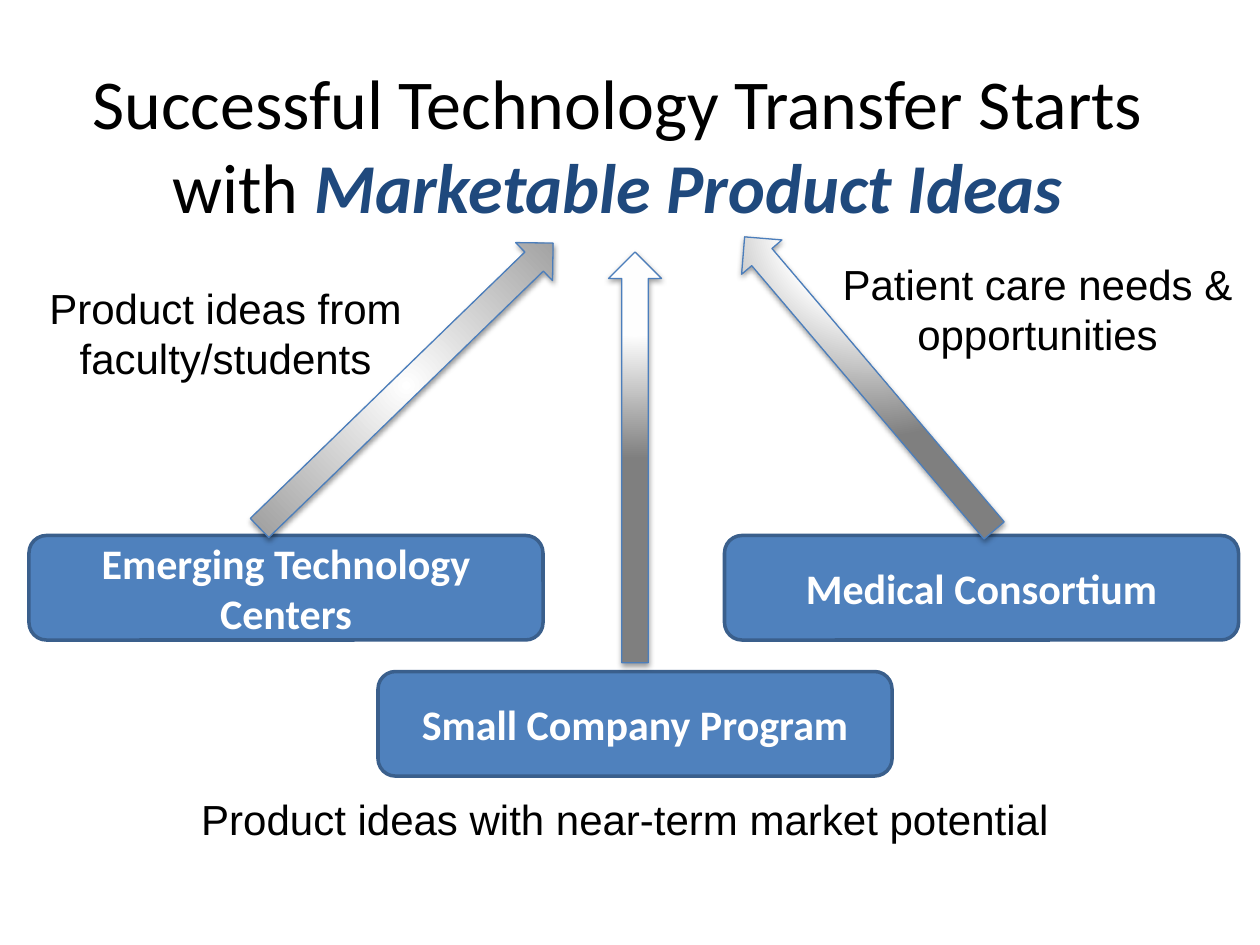
import math

import pptx
import pptx.dml.color
import pptx.enum.shapes
import pptx.enum.text
import pptx.oxml
import pptx.oxml.ns
import pptx.util

# Grid: 100 columns by 75 rows over the whole slide
SLIDE_WIDTH, SLIDE_HEIGHT = pptx.util.Inches(10), pptx.util.Inches(7.5)
COLUMN, ROW = SLIDE_WIDTH / 100, SLIDE_HEIGHT / 75

BOX_WIDTH, BOX_HEIGHT = 40.8, 8.3
UPPER_ROW, LOWER_ROW = 42.5, 53.3
ARROW_WIDTH = 4.2

PROGRAMS = [
    ("Emerging Technology Centers", 2.3, UPPER_ROW),
    ("Small Company Program", 30, LOWER_ROW),
    ("Medical Consortium", 57.5, UPPER_ROW),
]

# Stops as (percent, colour); focus as left, top, right, bottom percent
CENTRED_GRADIENT = ([(0, "FFFFFF"), (100, "979797")], (50, 50, 50, 50))
TOP_GRADIENT = ([(0, "FFFFFF"), (40, "FEFEFE"), (100, "7F7F7F")], (50, -80, 50, 180))

# Tail and head of each arrow, then its gradient
ARROWS = [
    ((20.6, 41.9), (43.9, 19.3), CENTRED_GRADIENT),
    ((78.9, 42.1), (59.1, 18.8), TOP_GRADIENT),
    ((50.4, 52.6), (50.4, 20), TOP_GRADIENT),
]

# Lines, box, whether the text wraps
CAPTIONS = [
    (["Product ideas from", "faculty/students"], (0.8, 21.9, 34.2, 9.1), True),
    (["Patient care needs &", "opportunities"], (65.7, 20, 33.3, 9.1), False),
    (["Product ideas with near-term market potential"], (14.6, 62.5, 70, 5.1), False),
]


def colour(value):
    return pptx.dml.color.RGBColor.from_string(value)


def place(box):
    left, top, width, height = box
    return [round(length) for length in
            (left * COLUMN, top * ROW, width * COLUMN, height * ROW)]


def format_text(text_frame, size, font, text_colour, bold=False):
    for paragraph in text_frame.paragraphs:
        paragraph.alignment = pptx.enum.text.PP_ALIGN.CENTER
        for run in paragraph.runs:
            run.font.size = pptx.util.Pt(size)
            run.font.name = font
            run.font.bold = bold
            run.font.color.rgb = colour(text_colour)


def add_title(slide, box):
    title = slide.shapes.title
    title.left, title.top, title.width, title.height = place(box)
    title.text_frame.vertical_anchor = pptx.enum.text.MSO_ANCHOR.MIDDLE
    paragraph = title.text_frame.paragraphs[0]
    paragraph.text = "Successful Technology Transfer Starts with "
    emphasis = paragraph.add_run()
    emphasis.text = "Marketable Product Ideas"
    format_text(title.text_frame, 40, "Calibri", "000000")
    emphasis.font.bold = emphasis.font.italic = True
    emphasis.font.color.rgb = colour("1F497D")


def add_program(slide, label, box):
    shape = slide.shapes.add_shape(
        pptx.enum.shapes.MSO_SHAPE.ROUNDED_RECTANGLE, *place(box))
    shape.shadow.inherit = False
    shape.fill.solid()
    shape.fill.fore_color.rgb = colour("4F81BD")
    shape.line.color.rgb = colour("3A5F8C")
    shape.line.width = pptx.util.Pt(2)
    shape.text_frame.text = label
    shape.text_frame.word_wrap = True
    shape.text_frame.vertical_anchor = pptx.enum.text.MSO_ANCHOR.MIDDLE
    format_text(shape.text_frame, 24, "Calibri", "FFFFFF", bold=True)


def radial_fill(stops, focus):
    stop_xml = "".join(
        f'<a:gs pos="{position * 1000}"><a:srgbClr val="{value}"/></a:gs>'
        for position, value in stops)
    left, top, right, bottom = (share * 1000 for share in focus)
    return pptx.oxml.parse_xml(
        f'<a:gradFill {pptx.oxml.ns.nsdecls("a")} rotWithShape="1">'
        f'<a:gsLst>{stop_xml}</a:gsLst><a:path path="circle">'
        f'<a:fillToRect l="{left}" t="{top}" r="{right}" b="{bottom}"/>'
        '</a:path></a:gradFill>')


def soft_shadow():
    return pptx.oxml.parse_xml(
        f'<a:outerShdw {pptx.oxml.ns.nsdecls("a")} blurRad="40000" dist="20000" '
        'dir="5400000" rotWithShape="0"><a:srgbClr val="000000">'
        '<a:alpha val="38000"/></a:srgbClr></a:outerShdw>')


def add_arrow(slide, tail, head, gradient):
    across, down = head[0] - tail[0], head[1] - tail[1]
    length = math.hypot(across, down)
    left = (tail[0] + head[0] - ARROW_WIDTH) / 2
    top = (tail[1] + head[1] - length) / 2
    arrow = slide.shapes.add_shape(
        pptx.enum.shapes.MSO_SHAPE.DOWN_ARROW,
        *place((left, top, ARROW_WIDTH, length)))
    arrow.rotation = math.degrees(math.atan2(-across, down)) % 360
    arrow.line.color.rgb = colour("4B7EBC")
    arrow.line.width = pptx.util.Pt(0.75)
    # Gradient goes right after the geometry, shadow into the effect list
    arrow.shadow.inherit = False
    properties = arrow.element.spPr
    geometry = properties.find(pptx.oxml.ns.qn("a:prstGeom"))
    geometry.addnext(radial_fill(*gradient))
    properties.find(pptx.oxml.ns.qn("a:effectLst")).append(soft_shadow())


def add_caption(slide, lines, box, wrap):
    text_frame = slide.shapes.add_textbox(*place(box)).text_frame
    text_frame.text = "\n".join(lines)
    text_frame.word_wrap = wrap
    text_frame.auto_size = pptx.enum.text.MSO_AUTO_SIZE.SHAPE_TO_FIT_TEXT
    format_text(text_frame, 24, "Arial", "000000")


def main():
    presentation = pptx.Presentation()
    presentation.slide_width, presentation.slide_height = SLIDE_WIDTH, SLIDE_HEIGHT
    slide = presentation.slides.add_slide(
        presentation.slide_layouts.get_by_name("Title Only"))

    add_title(slide, (4, 2, 90, 18.7))
    for label, left, top in PROGRAMS:
        add_program(slide, label, (left, top, BOX_WIDTH, BOX_HEIGHT))
    for tail, head, gradient in ARROWS:
        add_arrow(slide, tail, head, gradient)
    for lines, box, wrap in CAPTIONS:
        add_caption(slide, lines, box, wrap)

    presentation.save("out.pptx")


if __name__ == "__main__":
    main()
